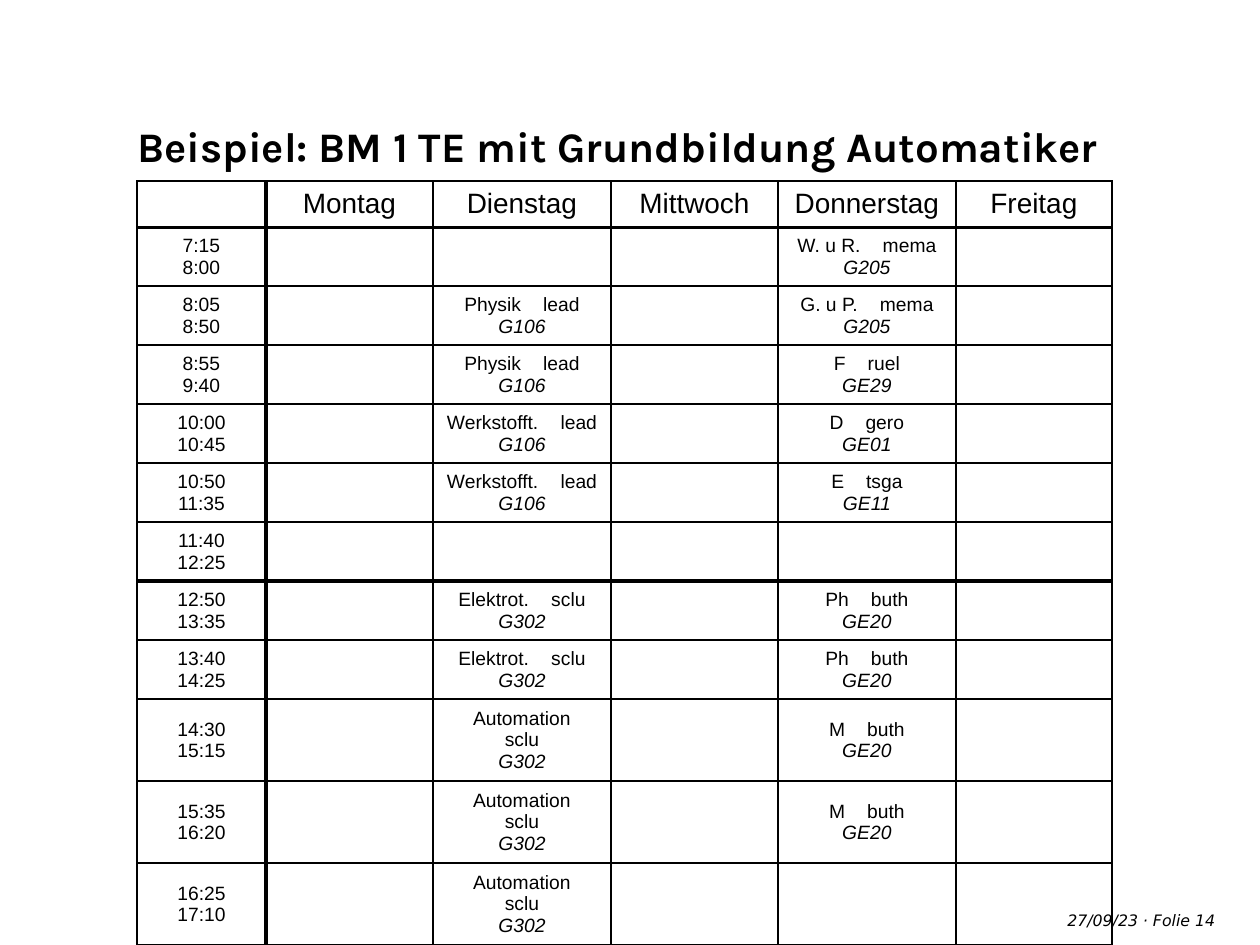
from dataclasses import dataclass
from itertools import product

from lxml.etree import SubElement
from pptx import Presentation
from pptx.dml.color import RGBColor
from pptx.enum.text import MSO_ANCHOR, MSO_AUTO_SIZE, PP_ALIGN
from pptx.oxml.ns import qn
from pptx.util import Emu, Pt

PX = 914400 / 126
COLORS = {"ink": "000000"}
DAYS = ["Montag", "Dienstag", "Mittwoch", "Donnerstag", "Freitag"]
COLUMN_WIDTHS = [129, 167, 178, 167, 178, 156]
HEADER_HEIGHT, LESSON_HEIGHT = 46, 59
THIN, THICK = 1, 2.25
THICK_BELOW_ROWS = {0, 6}
THICK_RIGHT_COLUMNS = {0}
GAP_SPACING = 950


@dataclass(frozen=True)
class Style:
    font: str
    size: int
    bold: bool = False
    italic: bool = False


@dataclass(frozen=True)
class Lesson:
    subject: str
    teacher: str
    room: str


@dataclass(frozen=True)
class Period:
    start: str
    end: str
    tuesday: Lesson | None = None
    thursday: Lesson | None = None


@dataclass(frozen=True)
class Label:
    text: str
    left: int
    width: int
    align: PP_ALIGN


TITLE = Style("Karla", 24, bold=True)
DAY = Style("Arial", 16)
PLAIN = Style("Arial", 11)
ROOM = Style("Arial", 11, italic=True)
FOOTER = Style("DejaVu Sans", 9, italic=True)

PHYSICS = Lesson("Physik", "lead", "G106")
MATERIALS = Lesson("Werkstofft.", "lead", "G106")
ELECTRICS = Lesson("Elektrot.", "sclu", "G302")
AUTOMATION = Lesson("Automation", "sclu", "G302")
PHILOSOPHY = Lesson("Ph", "buth", "GE20")
MATHS = Lesson("M", "buth", "GE20")

PERIODS = [
    Period("7:15", "8:00", None, Lesson("W. u R.", "mema", "G205")),
    Period("8:05", "8:50", PHYSICS, Lesson("G. u P.", "mema", "G205")),
    Period("8:55", "9:40", PHYSICS, Lesson("F", "ruel", "GE29")),
    Period("10:00", "10:45", MATERIALS, Lesson("D", "gero", "GE01")),
    Period("10:50", "11:35", MATERIALS, Lesson("E", "tsga", "GE11")),
    Period("11:40", "12:25"),
    Period("12:50", "13:35", ELECTRICS, PHILOSOPHY),
    Period("13:40", "14:25", ELECTRICS, PHILOSOPHY),
    Period("14:30", "15:15", AUTOMATION, MATHS),
    Period("15:35", "16:20", AUTOMATION, MATHS),
    Period("16:25", "17:10", AUTOMATION),
]
LABELS = [
    Label("27/09/23", 944, 194, PP_ALIGN.RIGHT),
    Label("· Folie 14", 1143, 96, PP_ALIGN.LEFT),
]


def px(length: int) -> Emu:
    return Emu(round(length * PX))


def add_span(para, text: str, style: Style):
    span = para.add_run()
    span.text = text
    font = span.font
    font.name, font.size = style.font, Pt(style.size)
    font.bold, font.italic = style.bold, style.italic
    font.color.rgb = RGBColor.from_string(COLORS["ink"])
    return span


def add_title(page, text: str) -> None:
    box = page.shapes.title
    box.left, box.top, box.width, box.height = px(137), px(113), px(1084), px(64)
    frame = box.text_frame
    frame.margin_left = 0
    frame.word_wrap = False
    frame.auto_size = MSO_AUTO_SIZE.NONE
    frame.vertical_anchor = MSO_ANCHOR.BOTTOM
    para = frame.paragraphs[0]
    para.alignment = PP_ALIGN.LEFT
    add_span(para, text, TITLE)


def add_label(page, label: Label) -> None:
    box = page.shapes.add_textbox(px(label.left), px(911), px(label.width), px(25))
    frame = box.text_frame
    frame.word_wrap = True
    frame.margin_left = frame.margin_right = 0
    frame.margin_top = frame.margin_bottom = 0
    para = frame.paragraphs[0]
    para.alignment = label.align
    add_span(para, label.text, FOOTER)


def set_borders(cell, row: int, column: int) -> None:
    edges = {
        "a:lnL": column - 1 in THICK_RIGHT_COLUMNS,
        "a:lnR": column in THICK_RIGHT_COLUMNS,
        "a:lnT": row - 1 in THICK_BELOW_ROWS,
        "a:lnB": row in THICK_BELOW_ROWS,
    }
    properties = cell._tc.get_or_add_tcPr()
    for position, (tag, thick) in enumerate(edges.items()):
        line = SubElement(properties, qn(tag), w=str(Pt(THICK if thick else THIN)))
        fill = SubElement(line, qn("a:solidFill"))
        SubElement(fill, qn("a:srgbClr"), val=COLORS["ink"])
        properties.insert(position, line)


def write_lines(cell, lines: list[tuple[list[str], Style]]) -> None:
    frame = cell.text_frame
    for index, (words, style) in enumerate(lines):
        para = frame.add_paragraph() if index else frame.paragraphs[0]
        para.alignment = PP_ALIGN.CENTER
        for position, word in enumerate(words):
            if position:
                gap = add_span(para, " ", style)
                gap.font._element.set("spc", str(GAP_SPACING))
            add_span(para, word, style)


def write_lesson(cell, lesson: Lesson | None) -> None:
    if lesson:
        subject = [lesson.subject, lesson.teacher]
        write_lines(cell, [(subject, PLAIN), ([lesson.room], ROOM)])


def add_timetable(page) -> None:
    rows, columns = len(PERIODS) + 1, len(COLUMN_WIDTHS)
    height = HEADER_HEIGHT + LESSON_HEIGHT * len(PERIODS)
    frame = page.shapes.add_table(
        rows, columns, px(137), px(181), px(sum(COLUMN_WIDTHS)), px(height)
    )
    table = frame.table
    table.first_row = table.horz_banding = False
    for column, width in zip(table.columns, COLUMN_WIDTHS):
        column.width = px(width)
    for index, row in enumerate(table.rows):
        row.height = px(LESSON_HEIGHT if index else HEADER_HEIGHT)

    for column, day in enumerate(DAYS, 1):
        write_lines(table.cell(0, column), [([day], DAY)])
    for row, period in enumerate(PERIODS, 1):
        times = [([period.start], PLAIN), ([period.end], PLAIN)]
        write_lines(table.cell(row, 0), times)
        write_lesson(table.cell(row, 2), period.tuesday)
        write_lesson(table.cell(row, 4), period.thursday)

    for row, column in product(range(rows), range(columns)):
        cell = table.cell(row, column)
        cell.vertical_anchor = MSO_ANCHOR.MIDDLE
        if not cell.text_frame.text:
            cell.margin_top = cell.margin_bottom = 0
        cell.fill.background()
        set_borders(cell, row, column)


def main() -> None:
    deck = Presentation()
    deck.slide_width, deck.slide_height = px(1260), px(945)
    page = deck.slides.add_slide(deck.slide_layouts[5])
    for label in LABELS:
        add_label(page, label)
    add_title(page, "Beispiel: BM 1 TE mit Grundbildung Automatiker")
    add_timetable(page)
    deck.save("out.pptx")


if __name__ == "__main__":
    main()
